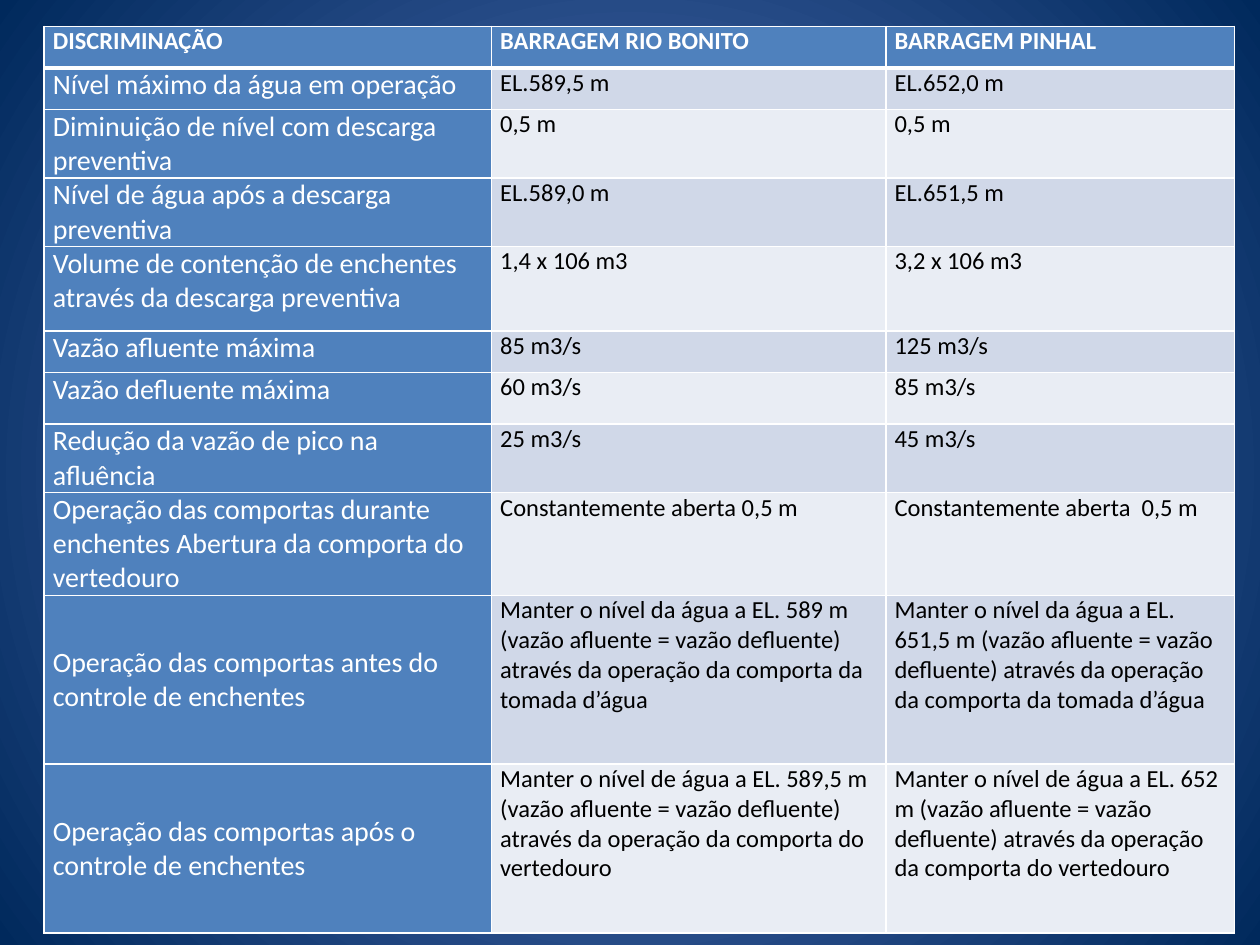
from typing import NamedTuple

from lxml.etree import SubElement
from pptx import Presentation
from pptx.dml.color import RGBColor
from pptx.enum.text import MSO_ANCHOR as Anchor
from pptx.oxml.ns import qn
from pptx.util import Inches, Pt

WHITE, BLACK, BLUE = "FFFFFF", "000000", "4F81BD"
BANDS = ("D0D8E8", "E9EDF4")
COLUMN_WIDTHS = (3.55, 3.13, 2.77)
HEADER_HEIGHT = 0.33
HEADINGS = ("DISCRIMINAÇÃO", "BARRAGEM RIO BONITO", "BARRAGEM PINHAL")


class Criterion(NamedTuple):
    label: str
    rio_bonito: str
    pinhal: str
    height: float
    anchor: Anchor = Anchor.TOP


def keep_level(article: str, level: str, gate: str) -> str:
    return (f"Manter o nível {article} água a EL. {level} m (vazão afluente = vazão defluente) "
            f"através da operação da comporta {gate}")


CRITERIA = (
    Criterion("Nível máximo da água em operação", "EL.589,5 m", "EL.652,0 m", 0.33),
    Criterion("Diminuição de nível com descarga preventiva", "0,5 m", "0,5 m", 0.52),
    Criterion("Nível de água após a descarga preventiva", "EL.589,0 m", "EL.651,5 m", 0.52),
    Criterion("Volume de contenção de enchentes através da descarga preventiva",
              "1,4 x 106 m3", "3,2 x 106 m3", 0.67),
    Criterion("Vazão afluente máxima", "85 m3/s", "125 m3/s", 0.33),
    Criterion("Vazão defluente máxima", "60 m3/s", "85 m3/s", 0.41),
    Criterion("Redução da vazão de pico na afluência", "25 m3/s", "45 m3/s", 0.52),
    Criterion("Operação das comportas durante enchentes Abertura da comporta do vertedouro",
              "Constantemente aberta 0,5 m", "Constantemente aberta  0,5 m", 0.77),
    Criterion("Operação das comportas antes do controle de enchentes",
              keep_level("da", "589", "da tomada d’água"),
              keep_level("da", "651,5", "da tomada d’água"), 1.34, Anchor.MIDDLE),
    Criterion("Operação das comportas após o controle de enchentes",
              keep_level("de", "589,5", "do vertedouro"),
              keep_level("de", "652", "do vertedouro"), 1.34, Anchor.MIDDLE),
)


def rgb(color: str) -> RGBColor:
    return RGBColor.from_string(color)


def set_borders(cell, **widths: float) -> None:
    """Draw white borders; widths are points keyed by side: L, R, T, B."""
    properties = cell._tc.get_or_add_tcPr()
    for side, width in widths.items():
        line = SubElement(properties, qn(f"a:ln{side}"), w=str(Pt(width)))
        SubElement(SubElement(line, qn("a:solidFill")), qn("a:srgbClr"), val=WHITE)


def write(cell, text: str, *, size: float = 14, color: str = BLACK, bold: bool = False,
          fill: str = BLUE, anchor: Anchor = Anchor.TOP) -> None:
    cell.margin_left = cell.margin_right = Inches(0.07)
    cell.margin_top = cell.margin_bottom = 0
    cell.vertical_anchor = anchor
    cell.fill.solid()
    cell.fill.fore_color.rgb = rgb(fill)
    run = cell.text_frame.paragraphs[0].add_run()
    run.text = text
    run.font.name, run.font.size, run.font.bold = "Calibri", Pt(size), bold
    run.font.color.rgb = rgb(color)


def paint_background(slide, center: str, edge: str) -> None:
    fill = slide.background.fill
    fill.gradient()
    for stop, color, position in zip(fill.gradient_stops, (center, edge), (0, 1)):
        stop.color.rgb = rgb(color)
        stop.position = position
    gradient = slide._element.find(".//" + qn("a:gradFill"))
    gradient.remove(gradient.find(qn("a:lin")))
    radial = SubElement(gradient, qn("a:path"), path="circle")
    SubElement(radial, qn("a:fillToRect"), l="50000", t="50000", r="50000", b="50000")


def add_dam_table(slide) -> None:
    heights = [HEADER_HEIGHT, *(criterion.height for criterion in CRITERIA)]
    table = slide.shapes.add_table(
        len(heights), len(COLUMN_WIDTHS), Inches(0.35), Inches(0.21),
        Inches(sum(COLUMN_WIDTHS)), Inches(sum(heights))).table
    for column, width in zip(table.columns, COLUMN_WIDTHS):
        column.width = Inches(width)
    for row, height in zip(table.rows, heights):
        row.height = Inches(height)

    for column, heading in enumerate(HEADINGS):
        cell = table.cell(0, column)
        set_borders(cell, L=1, R=1, T=1, B=3)
        write(cell, heading, color=WHITE, bold=True)

    for row, criterion in enumerate(CRITERIA, start=1):
        for column in range(len(HEADINGS)):
            set_borders(table.cell(row, column), L=1, R=1, T=3 if row == 1 else 1, B=1)
        write(table.cell(row, 0), criterion.label, size=16, color=WHITE,
              anchor=criterion.anchor)
        band = BANDS[(row - 1) % 2]
        write(table.cell(row, 1), criterion.rio_bonito, fill=band)
        write(table.cell(row, 2), criterion.pinhal, fill=band)


def main() -> None:
    deck = Presentation()
    deck.slide_width, deck.slide_height = Inches(10), Inches(7.5)
    slide = deck.slides.add_slide(deck.slide_layouts[6])
    paint_background(slide, center="5E7CC5", edge="00295C")
    add_dam_table(slide)
    deck.save("out.pptx")


if __name__ == "__main__":
    main()
